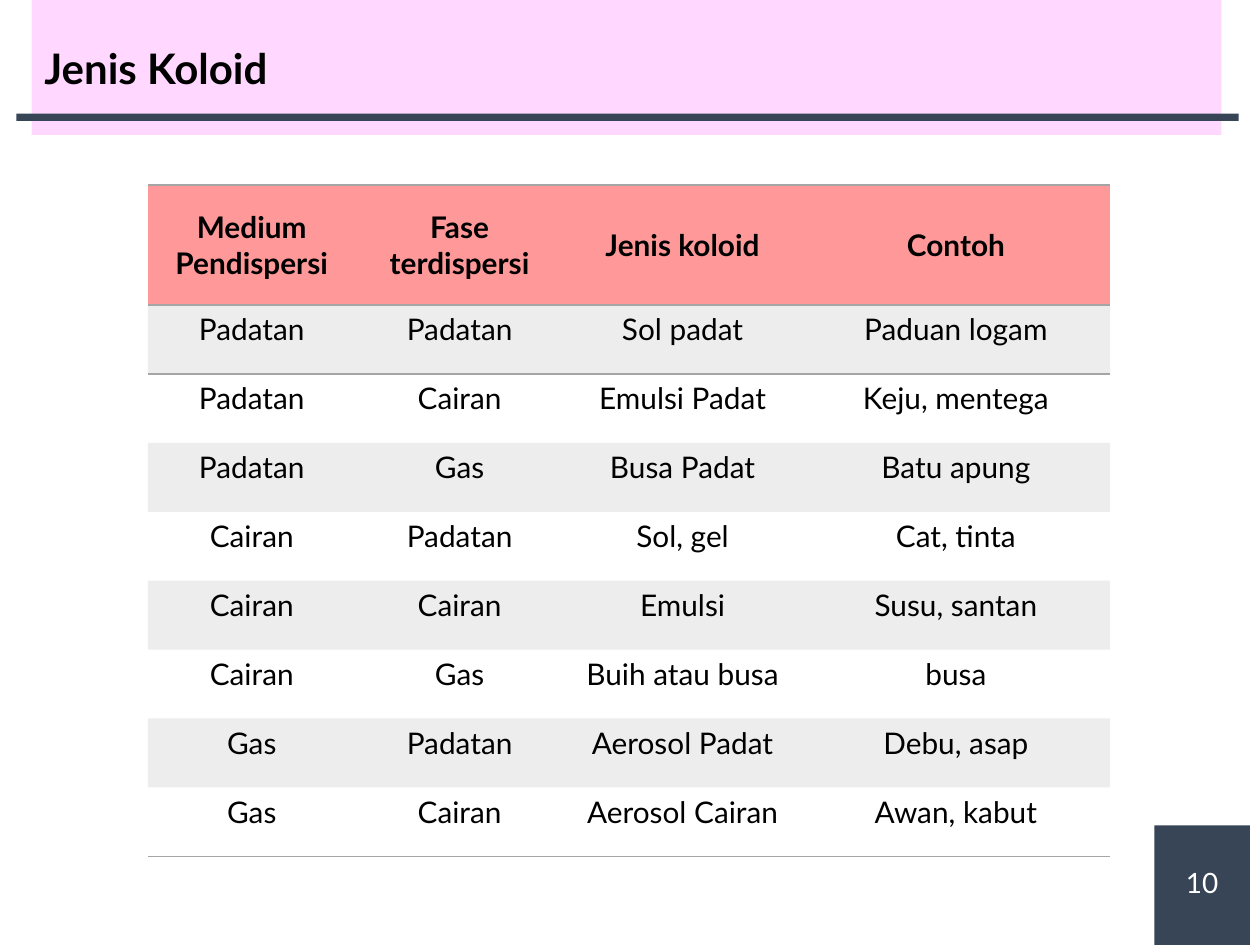
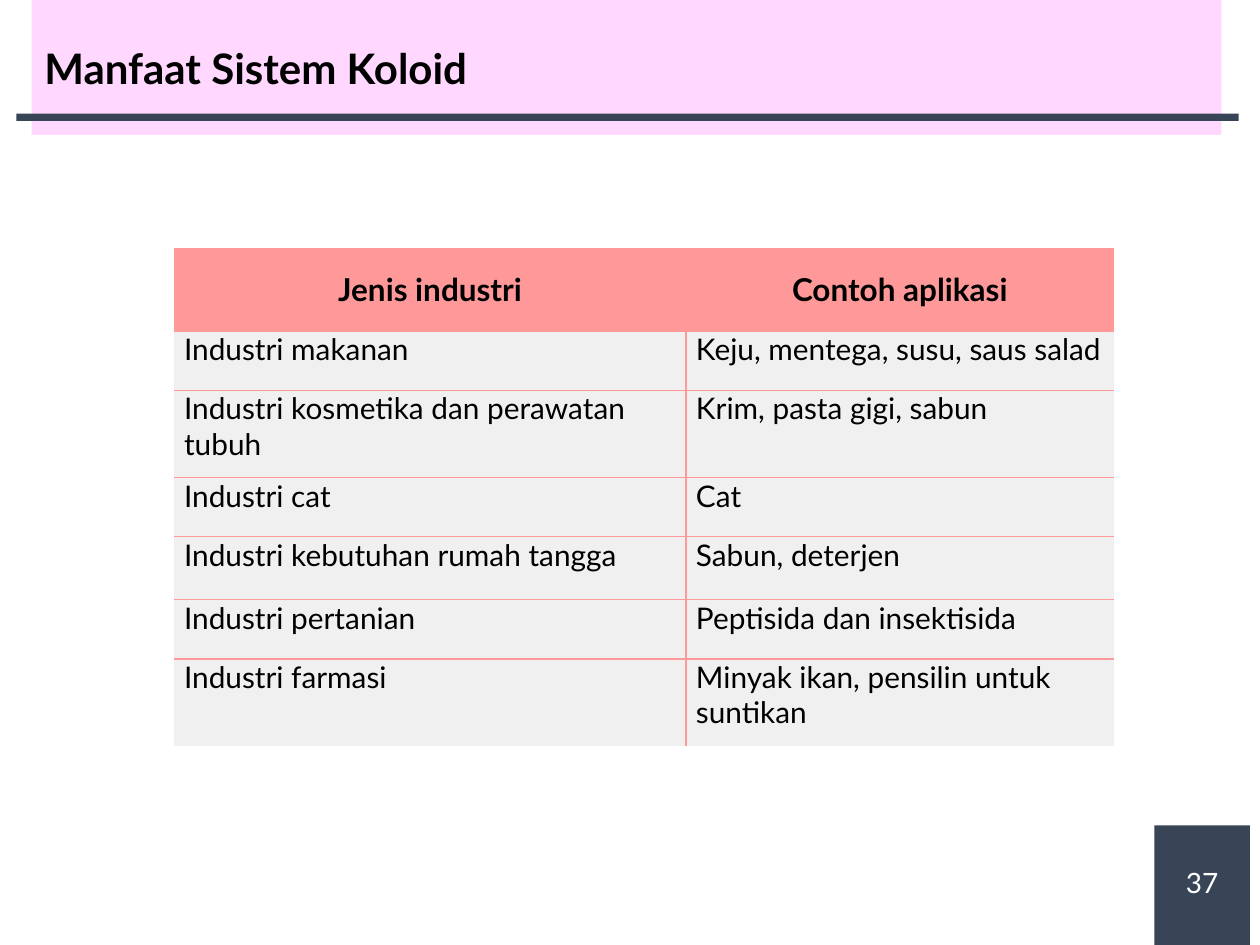
from collections import namedtuple
from dataclasses import dataclass

from lxml import etree
from pptx import Presentation
from pptx import util as u
from pptx.dml.color import RGBColor
from pptx.enum import shapes, text
from pptx.oxml.ns import qn

Box = namedtuple("Box", "left top width height")


@dataclass(frozen=True)
class Theme:
    font: str = "Lato"
    ink: str = "000000"
    paper: str = "FFFFFF"
    band: str = "FFCCFF"
    navy: str = "374557"
    header: str = "FF9999"
    grey: str = "A5A5A5"
    pale: str = "F0F0F0"
    title_size: float = 24
    number_size: float = 16
    body_size: float = 17
    header_size: float = 18


THEME = Theme()
SLIDE = Box(0, 0, 25.4, 19.05)
BAND = Box(0.64, 0, 23.98, 2.72)
RULE = Box(0.33, 2.29, 24.64, 0.15)
CORNER = Box(23.27, 16.64, 1.93, 2.41)
NO_GRID_STYLE = "{2D5ABB26-0587-4C30-8999-92F81FD0307C}"

COLLOID_TYPES = [
    ("Medium Pendispersi", "Fase terdispersi", "Jenis koloid", "Contoh"),
    ("Padatan", "Padatan", "Sol padat", "Paduan logam"),
    ("Padatan", "Cairan", "Emulsi Padat", "Keju, mentega"),
    ("Padatan", "Gas", "Busa Padat", "Batu apung"),
    ("Cairan", "Padatan", "Sol, gel", "Cat, tinta"),
    ("Cairan", "Cairan", "Emulsi", "Susu, santan"),
    ("Cairan", "Gas", "Buih atau busa", "busa"),
    ("Gas", "Padatan", "Aerosol Padat", "Debu, asap"),
    ("Gas", "Cairan", "Aerosol Cairan", "Awan, kabut"),
]
INDUSTRY_USES = [
    ("Jenis industri", "Contoh aplikasi"),
    ("Industri makanan", "Keju, mentega, susu, saus salad"),
    ("Industri kosmetika dan perawatan tubuh", "Krim, pasta gigi, sabun"),
    ("Industri cat", "Cat"),
    ("Industri kebutuhan rumah tangga", "Sabun, deterjen"),
    ("Industri pertanian", "Peptisida dan insektisida"),
    ("Industri farmasi", "Minyak ikan, pensilin untuk suntikan"),
]


def cm(box):
    return [u.Cm(length) for length in box]


def paint(fill, color, opacity=100):
    fill.solid()
    fill.fore_color.rgb = RGBColor.from_string(color)
    if opacity < 100:
        for tint in fill._xPr.iter(qn("a:srgbClr")):
            etree.SubElement(tint, qn("a:alpha"), val=str(opacity * 1000))


def write(frame, words, size, color=THEME.ink, bold=False,
          align=text.PP_ALIGN.LEFT):
    paragraph = frame.paragraphs[0]
    paragraph.alignment = align
    run = paragraph.add_run()
    run.text = words
    run.font.name = THEME.font
    run.font.size = u.Pt(size)
    run.font.bold = bold
    run.font.color.rgb = RGBColor.from_string(color)


def add_block(slide, box):
    block = slide.shapes.add_shape(shapes.MSO_SHAPE.RECTANGLE, *cm(box))
    block.shadow.inherit = False
    block.line.fill.background()
    paint(block.fill, THEME.navy)


def add_title_band(slide, box, words):
    title = slide.shapes.title
    title.left, title.top, title.width, title.height = cm(box)
    paint(title.fill, THEME.band, 78)
    title.text_frame.auto_size = text.MSO_AUTO_SIZE.NONE
    title.text_frame.vertical_anchor = text.MSO_ANCHOR.MIDDLE
    write(title.text_frame, words, THEME.title_size, bold=True)


def add_page_number(slide, box, number):
    add_block(slide, box)
    label = Box(box.left, box.top + 0.63, box.width, 1.02)
    frame = slide.shapes.add_textbox(*cm(label)).text_frame
    frame.word_wrap = True
    frame.vertical_anchor = text.MSO_ANCHOR.MIDDLE
    write(frame, str(number), THEME.number_size, THEME.paper,
          align=text.PP_ALIGN.CENTER)


def start_slide(deck, heading, number):
    slide = deck.slides.add_slide(deck.slide_layouts[5])
    add_title_band(slide, BAND, heading)
    add_page_number(slide, CORNER, number)
    add_block(slide, RULE)
    return slide


def add_grid(slide, left, top, widths, heights):
    box = Box(left, top, sum(widths), sum(heights))
    table = slide.shapes.add_table(len(heights), len(widths), *cm(box)).table
    table.first_row = table.horz_banding = False
    table._tbl.tblPr.find(qn("a:tableStyleId")).text = NO_GRID_STYLE
    for column, width in zip(table.columns, widths):
        column.width = u.Cm(width)
    for row, height in zip(table.rows, heights):
        row.height = u.Cm(height)
    return table


def draw_borders(cell, sides, color):
    properties = cell._tc.get_or_add_tcPr()
    for side in "LRTB":
        if side in sides:
            line = etree.SubElement(properties, qn(f"a:ln{side}"), w=str(u.Pt(1)))
            fill = etree.SubElement(line, qn("a:solidFill"))
            etree.SubElement(fill, qn("a:srgbClr"), val=color)


def set_insets(cell, across, down):
    cell.margin_left = cell.margin_right = u.Cm(across)
    cell.margin_top = cell.margin_bottom = u.Cm(down)


def fill_header_cell(cell, words, size):
    cell.vertical_anchor = text.MSO_ANCHOR.MIDDLE
    paint(cell.fill, THEME.header)
    write(cell.text_frame, words, size, bold=True, align=text.PP_ALIGN.CENTER)


def add_colloid_table(slide, left, top):
    records = COLLOID_TYPES
    last = len(records) - 1
    table = add_grid(slide, left, top, [4.19, 4.19, 4.8, 6.22],
                     [2.42] + [1.39] * last)
    ruled_sides = {0: "TB", 1: "T", last: "B"}
    for r, record in enumerate(records):
        for c, words in enumerate(record):
            cell = table.cell(r, c)
            set_insets(cell, 0.25, 0.13)
            draw_borders(cell, ruled_sides.get(r, ""), THEME.grey)
            if r == 0:
                fill_header_cell(cell, words, THEME.body_size)
                continue
            if r % 2:
                paint(cell.fill, THEME.grey, 20)
            else:
                cell.fill.background()
            write(cell.text_frame, words, THEME.body_size,
                  align=text.PP_ALIGN.CENTER)


def add_industry_table(slide, left, top):
    records = INDUSTRY_USES
    last = len(records) - 1
    table = add_grid(slide, left, top, [10.32, 8.62],
                     [1.68, 1.19, 1.76, 1.19, 1.27, 1.19, 1.76])
    for r, record in enumerate(records):
        for c, words in enumerate(record):
            cell = table.cell(r, c)
            set_insets(cell, 0.2, 0)
            inner_sides = "RL"[c] + ("T" if r else "") + ("B" if r < last else "")
            draw_borders(cell, inner_sides, THEME.header)
            if r == 0:
                fill_header_cell(cell, words, THEME.header_size)
            else:
                paint(cell.fill, THEME.pale)
                write(cell.text_frame, words, THEME.body_size)


def main():
    deck = Presentation()
    deck.slide_width, deck.slide_height = u.Cm(SLIDE.width), u.Cm(SLIDE.height)
    add_colloid_table(start_slide(deck, "Jenis Koloid", 10), 2.98, 3.73)
    add_industry_table(start_slide(deck, "Manfaat Sistem Koloid", 37), 3.51, 5)
    deck.save("out.pptx")


if __name__ == "__main__":
    main()
